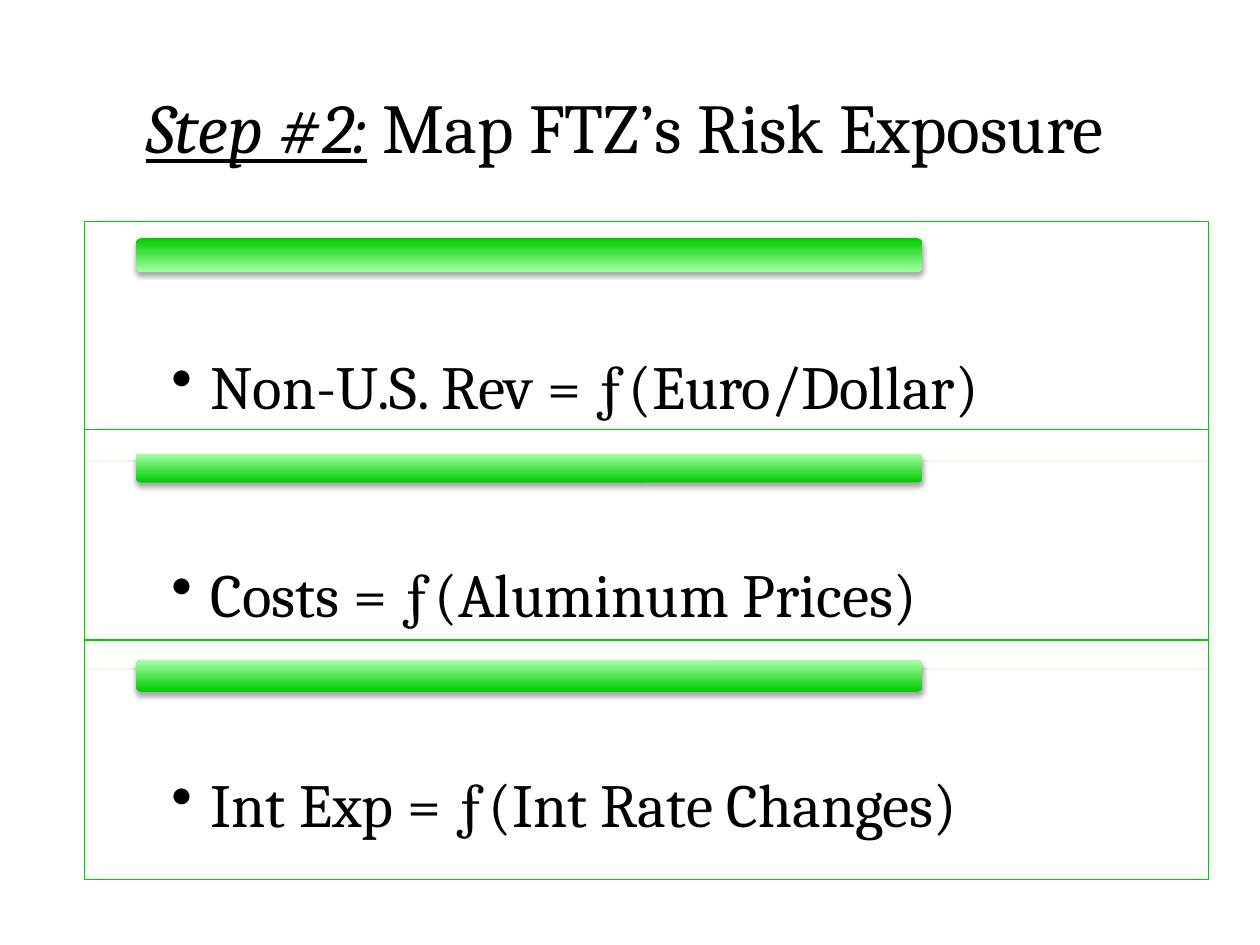
from dataclasses import dataclass

from lxml.etree import SubElement
from pptx import Presentation
from pptx.dml.color import RGBColor
from pptx.enum.shapes import MSO_SHAPE as Shape
from pptx.enum.text import MSO_ANCHOR as Anchor, PP_ALIGN as Align
from pptx.oxml.ns import qn
from pptx.util import Emu, Inches, Pt

WHITE = RGBColor(0xFF, 0xFF, 0xFF)
BLACK = RGBColor(0x00, 0x00, 0x00)
GREEN = RGBColor(0x00, 0xCC, 0x00)
PALE = RGBColor(0xA5, 0xFF, 0xA5)
FONT = "Cambria"
WIDE, HIGH = Inches(10), Inches(7.5)

# Shared columns, in inches
BOX_X, BOX_W, BOX_H = 0.67, 8.92, 1.9
BAR_X, BAR_W = 1.08, 6.24


@dataclass
class Risk:
    text: str
    top: float
    bar_top: float
    bar_high: float
    dark_top: bool = False


RISKS = [
    Risk("Non-U.S. Rev = ƒ(Euro/Dollar)", 1.76, 1.89, 0.27, True),
    Risk("Costs = ƒ(Aluminum Prices)", 3.41, 3.6, 0.23),
    Risk("Int Exp = ƒ(Int Rate Changes)", 5.08, 5.24, 0.25),
]


def add_child(node, tag: str, **attrs):
    return SubElement(node, qn(tag), attrs)


def set_title(title) -> None:
    title.left, title.top = Inches(0.42), Inches(0.5)
    title.width, title.height = Inches(9.08), Inches(1)
    frame = title.text_frame
    frame.vertical_anchor = Anchor.MIDDLE
    para = frame.paragraphs[0]
    para.alignment = Align.CENTER
    step = para.add_run()
    step.text = "Step #2:"
    step.font.italic = step.font.underline = True
    para.add_run().text = " Map FTZ’s Risk Exposure"
    style_font(para.font, 40)


def style_font(font, size: float) -> None:
    font.name, font.size = FONT, Pt(size)
    font.color.rgb = BLACK


def add_box(slide, risk: Risk) -> None:
    box = slide.shapes.add_shape(
        Shape.RECTANGLE, Inches(BOX_X), Inches(risk.top),
        Inches(BOX_W), Inches(BOX_H))
    box.shadow.inherit = False
    box.fill.solid()
    box.fill.fore_color.rgb = WHITE
    color = box._element.spPr.find(qn("a:solidFill"))[0]
    add_child(color, "a:alpha", val="90000")
    box.line.color.rgb = GREEN
    box.line.width = Pt(0.75)

    # Bulleted formula
    frame = box.text_frame
    frame.word_wrap = True
    frame.vertical_anchor = Anchor.TOP
    frame.margin_left = frame.margin_right = Inches(0.69)
    frame.margin_top, frame.margin_bottom = Inches(1.07), Inches(0.27)
    para = frame.paragraphs[0]
    para.text = risk.text
    para.alignment = Align.LEFT
    para.line_spacing = 0.9
    props = para._p.get_or_add_pPr()
    indent = Inches(0.31)
    props.set("marL", str(indent))
    props.set("indent", str(-indent))
    add_child(props, "a:buChar", char="•")
    style_font(para.font, 35)


def add_bar(slide, risk: Risk) -> None:
    bar = slide.shapes.add_shape(
        Shape.ROUNDED_RECTANGLE, Inches(BAR_X), Inches(risk.bar_top),
        Inches(BAR_W), Inches(risk.bar_high))
    bar.line.fill.background()
    bar.fill.gradient()
    bar.fill.gradient_angle = 270 if risk.dark_top else 90
    for stop, color, place in zip(bar.fill.gradient_stops, (GREEN, PALE), (0, 1)):
        stop.color.rgb, stop.position = color, place

    # Soft shadow below the bar
    bar.shadow.inherit = False
    effects = bar._element.spPr.find(qn("a:effectLst"))
    shadow = add_child(effects, "a:outerShdw", blurRad=str(Pt(3.1)),
                       dist=str(Pt(1.8)), dir="5400000", rotWithShape="0")
    color = add_child(shadow, "a:srgbClr", val=str(BLACK))
    add_child(color, "a:alpha", val="35000")


def main() -> None:
    deck = Presentation()
    deck.slide_width, deck.slide_height = Emu(WIDE), Emu(HIGH)
    slide = deck.slides.add_slide(deck.slide_layouts[5])
    set_title(slide.shapes.title)
    for risk in RISKS:
        add_box(slide, risk)
        add_bar(slide, risk)
    deck.save("out.pptx")


if __name__ == "__main__":
    main()
